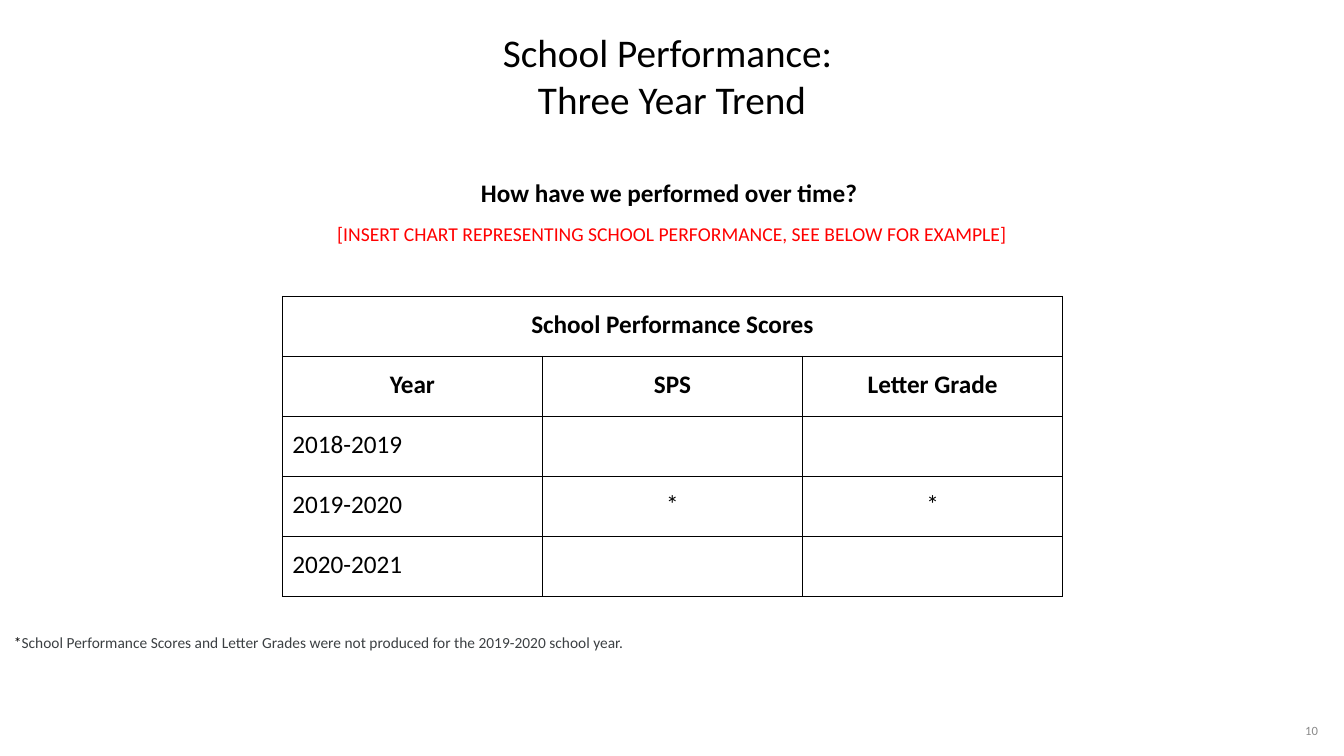
from lxml import etree
from pptx import Presentation
from pptx.dml.color import RGBColor
from pptx.enum.text import MSO_ANCHOR, MSO_AUTO_SIZE, PP_ALIGN
from pptx.oxml.ns import qn
from pptx.util import Inches, Pt

LEFT, CENTER, RIGHT = PP_ALIGN.LEFT, PP_ALIGN.CENTER, PP_ALIGN.RIGHT
TOP, MIDDLE = MSO_ANCHOR.TOP, MSO_ANCHOR.MIDDLE
NO_FIT = MSO_AUTO_SIZE.NONE
FONT = "Calibri"
COLORS = {"ink": "000000", "prompt": "FF0000", "note": "3C4043", "number": "8A8A8A"}


def write(para, text, size=18, color="ink", bold=False, align=LEFT, before=0, spacing=1.0):
    """Add formatted text to a paragraph."""
    para.alignment = align
    para.space_before = Pt(before)
    para.line_spacing = spacing
    span = para.add_run()
    span.text = text
    span.font.name = FONT
    span.font.size = Pt(size)
    span.font.bold = bold
    span.font.color.rgb = RGBColor.from_string(COLORS[color])


def frame_of(box, left, top, width, height, anchor=TOP, inset=0.1):
    """Place a text shape and return its prepared text frame."""
    box.left, box.top = Inches(left), Inches(top)
    box.width, box.height = Inches(width), Inches(height)
    frame = box.text_frame
    frame.word_wrap = True
    frame.auto_size = NO_FIT
    frame.vertical_anchor = anchor
    frame.margin_left = frame.margin_right = Inches(0.1)
    frame.margin_top = frame.margin_bottom = Inches(inset)
    return frame


deck = Presentation()
deck.slide_width, deck.slide_height = Inches(13.33), Inches(7.5)
page = deck.slides.add_slide(deck.slide_layouts[1])

# Title
title = frame_of(page.shapes.title, 0, -0.02, 13.33, 1.53, anchor=MIDDLE)
write(title.paragraphs[0], "School Performance: ", size=28, align=CENTER)
write(title.add_paragraph(), "Three Year Trend", size=28, align=CENTER)

# Question and prompt, without bullets
body = frame_of(page.placeholders[1], 0.27, 1.66, 12.79, 1.53)
write(body.paragraphs[0], "How have we performed over time? ", bold=True, align=CENTER)
write(body.add_paragraph(),
      "[INSERT CHART REPRESENTING SCHOOL PERFORMANCE, SEE BELOW FOR EXAMPLE]",
      size=14, color="prompt", align=CENTER, before=10)
for para in body.paragraphs:
    props = para._p.get_or_add_pPr()
    props.set("marL", "0")
    props.set("indent", "0")
    etree.SubElement(props, qn("a:buNone"))

# Score table
SCORES = [
    ["School Performance Scores", "", ""],
    ["Year", "SPS", "Letter Grade"],
    ["2018-2019", "", ""],
    ["2019-2020", "*", "*"],
    ["2020-2021", "", ""],
]
HEADER_ROWS = 2
table = page.shapes.add_table(len(SCORES), len(SCORES[0]), Inches(2.8), Inches(2.94),
                              Inches(7.74), Inches(2.98)).table
table.first_row = table.horz_banding = False
for row, values in enumerate(SCORES):
    for column, value in enumerate(values):
        cell = table.cell(row, column)
        cell.margin_left = cell.margin_right = Inches(0.1)
        cell.margin_top = cell.margin_bottom = Inches(0.13)
        header = row < HEADER_ROWS
        if value:
            write(cell.text_frame.paragraphs[0], value, bold=header,
                  align=CENTER if header or column else LEFT)
        # Borders come before the fill in the cell properties
        props = cell._tc.get_or_add_tcPr()
        for side in ("lnL", "lnR", "lnT", "lnB"):
            line = etree.SubElement(props, qn(f"a:{side}"), w=str(Pt(0.75)))
            paint = etree.SubElement(line, qn("a:solidFill"))
            etree.SubElement(paint, qn("a:srgbClr"), val=COLORS["ink"])
        cell.fill.background()
table.cell(0, 0).merge(table.cell(0, 2))

# Footnote
note_box = page.shapes.add_textbox(0, 0, 0, 0)
note = frame_of(note_box, 0.04, 6.15, 13.26, 1.14).paragraphs[0]
write(note, "*", size=11, spacing=1.15)
write(note, "School Performance Scores and Letter Grades were not produced "
            "for the 2019-2020 school year.", size=11, color="note", spacing=1.15)

# Page number
number_box = page.shapes.add_textbox(0, 0, 0, 0)
number = frame_of(number_box, 9.92, 7, 3.25, 0.5, anchor=MIDDLE, inset=0.05)
write(number.paragraphs[0], "10", size=9, color="number", align=RIGHT)

deck.save("out.pptx")
